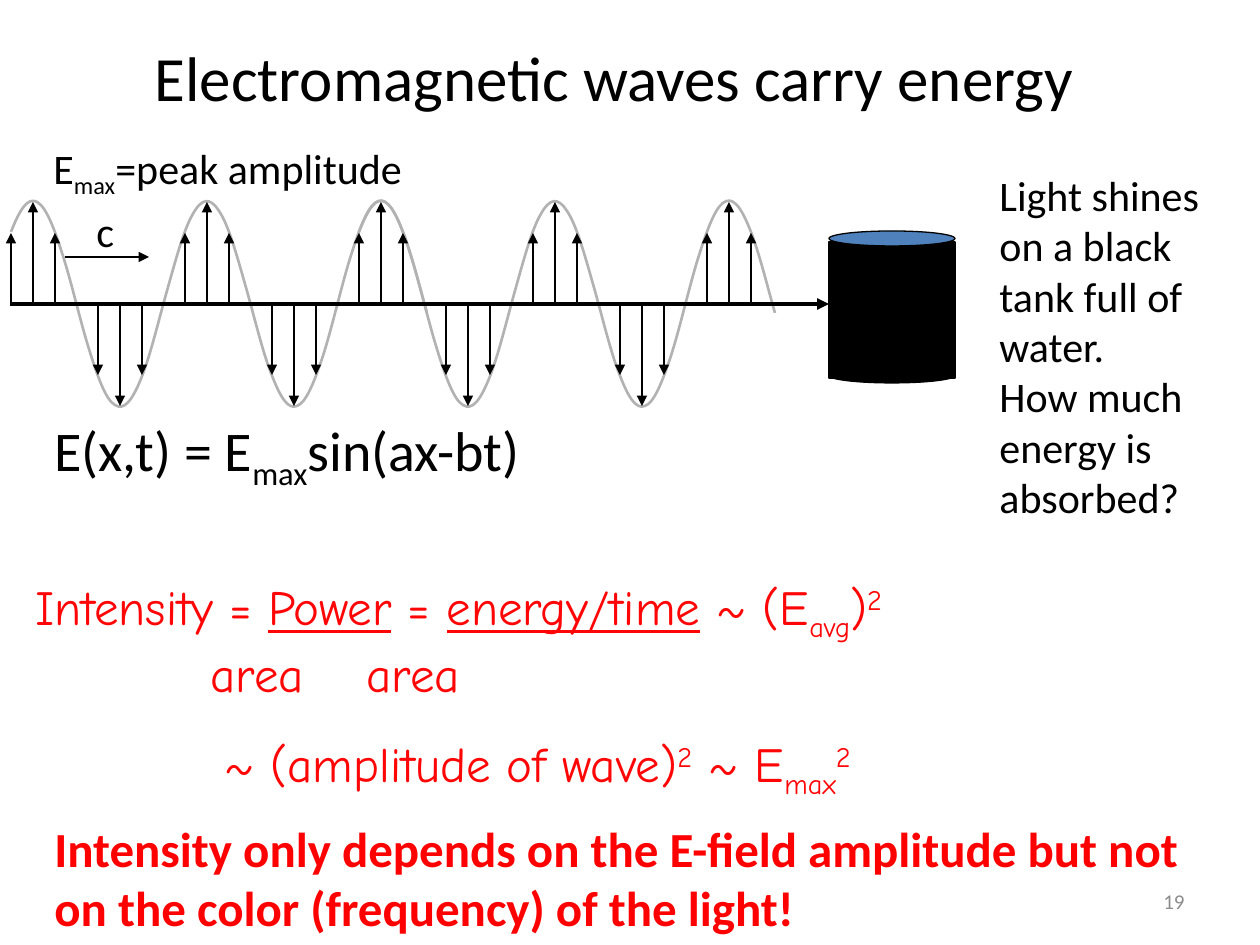
import math
from lxml import etree
from pptx import Presentation
from pptx import util as u
from pptx.dml.color import RGBColor
from pptx.enum import shapes, text
from pptx.oxml.ns import qn

PX = 914400 / 126
RED = "FF0505"
SHIFT = {"_": "-25000", "^": "30000"}
hue = RGBColor.from_string

deck = Presentation()
deck.slide_width, deck.slide_height = u.Inches(10), u.Inches(7.5)
slide = deck.slides.add_slide(deck.slide_layouts[6])
tree = slide.shapes


def label(box, lines, size, color="000000", face="Calibri", wrap=False):
    frame = tree.add_textbox(*[round(n * PX) for n in box]).text_frame
    frame.word_wrap = wrap
    frame.auto_size = text.MSO_AUTO_SIZE.SHAPE_TO_FIT_TEXT
    for i, line in enumerate(lines):
        para = frame.add_paragraph() if i else frame.paragraphs[0]
        for part in line.split("|"):
            mark = part[0] if part[0] in "_^*" else ""
            run = para.add_run()
            run.text = part[len(mark):]
            run.font.size, run.font.name = u.Pt(size), face
            run.font.color.rgb = hue(color)
            if mark == "*":
                run.font.underline = True
            elif mark:
                run._r.get_or_add_rPr().set("baseline", SHIFT[mark])
    return frame


def arrow(x1, y1, x2, y2, width=1.5):
    line = tree.add_connector(shapes.MSO_CONNECTOR.STRAIGHT,
                              *[round(n * PX) for n in (x1, y1, x2, y2)])
    line.line.color.rgb = hue("000000")
    line.line.width = u.Pt(width)
    etree.SubElement(line.line._get_or_add_ln(), qn("a:tailEnd"), type="triangle")
    etree.SubElement(line._element.spPr, qn("a:effectLst"))


page = label((903, 876, 294, 50), ["19"], 12, "8C8C8C", wrap=True)
title = label((31, 37, 1166, 78), ["Electromagnetic waves carry energy"], 36, wrap=True)
for frame, align in ((page, text.PP_ALIGN.RIGHT), (title, text.PP_ALIGN.CENTER)):
    frame.auto_size = text.MSO_AUTO_SIZE.NONE
    frame.vertical_anchor = text.MSO_ANCHOR.MIDDLE
    frame.paragraphs[0].alignment = align

CREST, HALF, AXIS, HEIGHT, STEP = 33, 87, 304, 103, 26
RATE = math.pi / HALF
for start in (11, 11 + 4 * HALF):
    dots = []
    for x in range(start, start + 16 * STEP + 1, STEP):
        y = AXIS - HEIGHT * math.cos(RATE * (x - CREST))
        rise = HEIGHT * RATE * math.sin(RATE * (x - CREST))
        dots += [(x + d, y + rise * d) for d in (-STEP / 3, 0, STEP / 3)]
    dots = dots[1:-1]
    pen = tree.build_freeform(*dots[0], scale=PX)
    pen.add_line_segments(dots[1:], close=False)
    wave = pen.convert_to_shape()
    bits = wave._element.findall(".//" + qn("a:lnTo"))
    for i in range(0, len(bits), 3):
        curve = etree.SubElement(bits[i].getparent(), qn("a:cubicBezTo"))
        for bit in bits[i:i + 3]:
            curve.append(bit[0])
            bit.getparent().remove(bit)
    wave.shadow.inherit = False
    wave.fill.background()
    wave.line.color.rgb = hue("B2B2B2")
    wave.line.width = u.Pt(1.5)

for half in range(9):
    mid = CREST + half * HALF
    sign = 1 if half % 2 else -1
    for step, reach in ((-22, 71), (0, 102), (22, 71)):
        arrow(mid + step, AXIS, mid + step, AXIS + sign * reach)
arrow(10, AXIS, 829, AXIS, 2.25)

label((41, 136, 416, 63), ["E|_max|=peak amplitude"], 24)
label((42, 409, 563, 79), ["E(x,t) = E|_max|sin(ax-bt)"], 32)
arrow(65, 257, 149, 257, 0.75)
label((84, 199, 47, 63), ["c"], 24)

sums = label((23, 570, 969, 220), [
    "Intensity = |*Power| = |*energy/time| ~ (E|_avg|)|^2",
    "\tarea\tarea",
    "\t~ (amplitude of wave)|^2| ~ E|_max|^2",
], 28, RED, "Comic Neue")
for para, stops in zip(sums.paragraphs[1:], ((175, 331), (189,))):
    tabs = etree.SubElement(para._p.get_or_add_pPr(), qn("a:tabLst"))
    for stop in stops:
        etree.SubElement(tabs, qn("a:tab"), pos=str(round(stop * PX)), algn="l")
sums.paragraphs[2].space_before = u.Pt(18)

RECT, OVAL = shapes.MSO_SHAPE.RECTANGLE, shapes.MSO_SHAPE.OVAL
for kind, top, tall, color in ((RECT, 242, 136, "000000"),
                               (OVAL, 231, 15, "4F81BD"),
                               (OVAL, 368, 15, "000000")):
    tank = tree.add_shape(kind, *[round(n * PX) for n in (829, top, 126, tall)])
    tank.shadow.inherit = False
    tank.fill.solid()
    tank.fill.fore_color.rgb = hue(color)
    tank.line.color.rgb = hue("000000")
    tank.line.width = u.Pt(0.75)

label((987, 163, 273, 369), ["Light shines on a black tank full of water.",
                             "How much energy is absorbed?"], 24, wrap=True)
close = label((42, 812, 1176, 130), [
    "Intensity only depends on the E-field amplitude but not "
    "on the color (frequency) of the light!"], 28, "FF0000", wrap=True)
close.paragraphs[0].runs[0].font.bold = True

deck.save("out.pptx")
